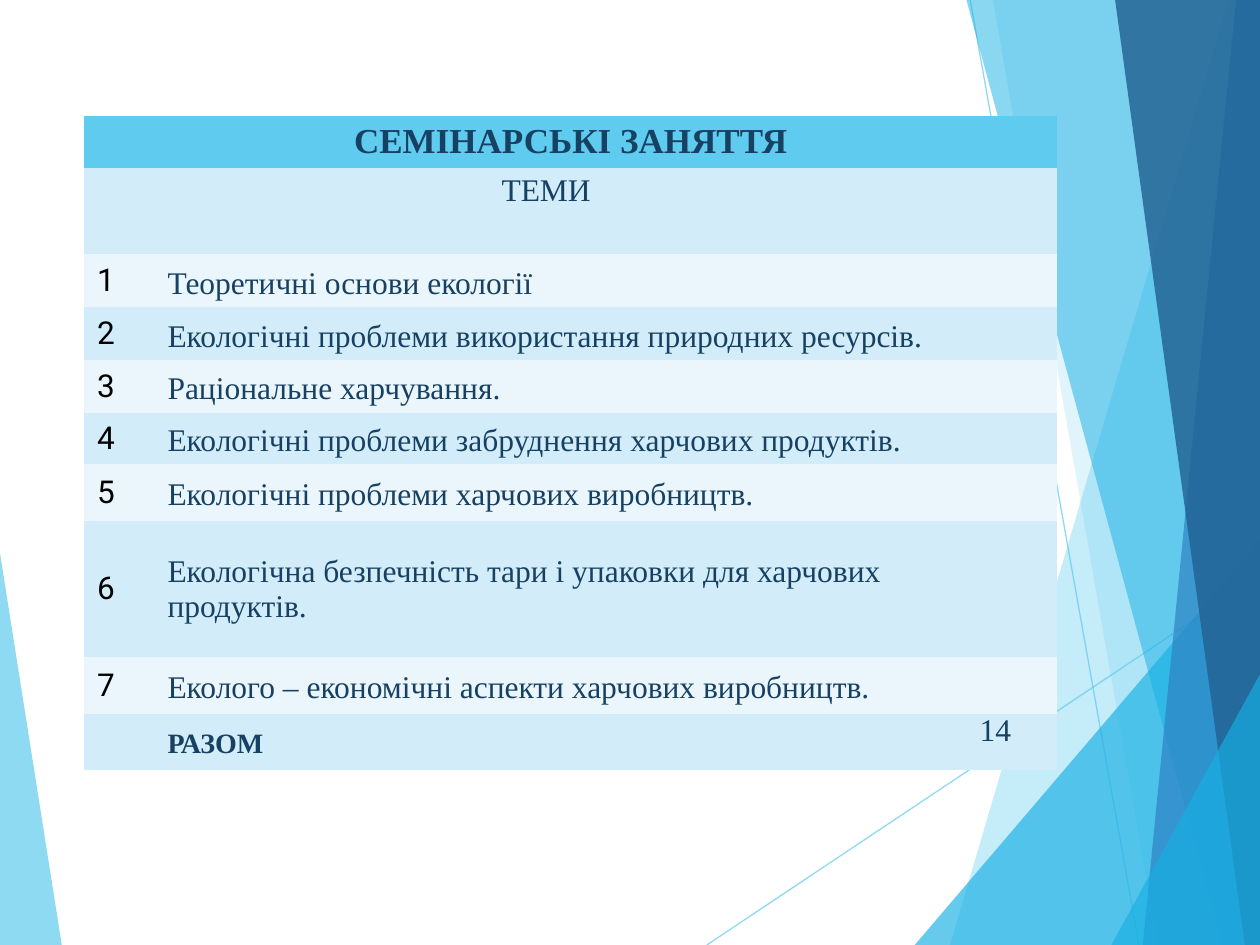
from lxml import etree
from pptx import Presentation
from pptx.dml.color import RGBColor
from pptx.enum import shapes, text
from pptx.oxml.ns import qn
from pptx.util import Inches, Pt

SKY = RGBColor(0x5F, 0xCB, 0xEF)
CYAN = RGBColor(0x17, 0xB0, 0xE4)
BLUE = RGBColor(0x2E, 0x83, 0xC3)
NAVY = RGBColor(0x22, 0x62, 0x92)
INK = RGBColor(0x17, 0x41, 0x62)
BLACK = RGBColor(0, 0, 0)
BAND_DARK = RGBColor(0xD2, 0xEC, 0xF9)
BAND_LIGHT = RGBColor(0xEA, 0xF6, 0xFC)

SERIF, SANS = "Times New Roman", "Roboto"
NO_GRID = "{2D5ABB26-0587-4C30-8999-92F81FD0307C}"
W, H = 10, 7.5

# Corner points, colour and opacity (%) of each facet, back to front
LEFT_FACET = ([(0, 4.39), (0.49, H), (0, H)], SKY, 70)
RIGHT_FACETS = [
    ([(9.75, 0), (7.54, H), (W, H), (W, 0)], SKY, 36),
    ([(7.88, 0), (9.19, H), (W, H), (W, 0)], SKY, 20),
    ([(7.26, H), (W, 4.29), (W, H)], CYAN, 66),
    ([(7.67, 0), (9.7, H), (W, H), (W, 0)], CYAN, 50),
    ([(9.81, 0), (9.07, H), (W, H), (W, 0)], BLUE, 70),
    ([(8.85, 0), (9.88, H), (W, H), (W, 0)], NAVY, 82),
    ([(8.82, H), (W, 5.35), (W, H)], CYAN, 66),
]
RAYS = [((5.61, H), (W, 4.57)), ((7.7, 0), (9.04, H))]

TOPICS = [
    "Теоретичні основи екології",
    "Екологічні проблеми використання природних ресурсів.",
    "Раціональне харчування.",
    "Екологічні проблеми забруднення харчових продуктів.",
    "Екологічні проблеми харчових виробництв.",
    "Екологічна безпечність тари і упаковки для харчових продуктів.",
    "Еколого – економічні аспекти харчових виробництв.",
]
COLUMNS = [0.59, 6.15, 0.98]
ROWS = [0.41, 0.69, 0.42, 0.42, 0.42, 0.4, 0.45, 1.08, 0.45, 0.45]
WRAPPED_TOPIC = 6


def set_opacity(properties, percent):
    """Add an alpha value to the first solid colour in the shape properties."""
    color = properties.find(".//" + qn("a:srgbClr"))
    etree.SubElement(color, qn("a:alpha")).set("val", str(percent * 1000))


class Deck:
    def __init__(self):
        self.presentation = Presentation()
        self.presentation.slide_width = Inches(W)
        self.presentation.slide_height = Inches(H)
        self.slide = self.presentation.slides.add_slide(
            self.presentation.slide_layouts[6])

    def facet(self, corners, color, opacity):
        points = [(Inches(x), Inches(y)) for x, y in corners]
        builder = self.slide.shapes.build_freeform(*points[0])
        builder.add_line_segments(points[1:], close=True)
        facet = builder.convert_to_shape()
        facet.shadow.inherit = False
        facet.fill.solid()
        facet.fill.fore_color.rgb = color
        facet.line.fill.background()
        set_opacity(facet._element.spPr, opacity)

    def ray(self, start, end):
        ray = self.slide.shapes.add_connector(
            shapes.MSO_CONNECTOR.STRAIGHT, *map(Inches, start + end))
        ray.line.color.rgb = SKY
        ray.line.width = Pt(0.75)
        properties = ray._element.spPr
        set_opacity(properties, 70)
        etree.SubElement(properties, qn("a:effectLst"))

    def table(self, left, top, columns, rows):
        table = self.slide.shapes.add_table(
            len(rows), len(columns), Inches(left), Inches(top),
            Inches(sum(columns)), Inches(sum(rows))).table
        table._tbl.tblPr.find(qn("a:tableStyleId")).text = NO_GRID
        for column, width in zip(table.columns, columns):
            column.width = Inches(width)
        for number, (row, height) in enumerate(zip(table.rows, rows)):
            row.height = Inches(height)
            for cell in row.cells:
                cell.fill.solid()
                cell.fill.fore_color.rgb = (
                    SKY if number == 0 else
                    BAND_DARK if number % 2 else BAND_LIGHT)
        return table

    def cell_text(self, cell, words, size=18, bold=False, font=SERIF,
                  color=INK, centered=False, middle=False, tight=False,
                  spaced=False):
        """Fill a cell; tight drops its top and bottom margins."""
        if middle:
            cell.vertical_anchor = text.MSO_ANCHOR.MIDDLE
        if tight:
            cell.margin_left = cell.margin_right = Inches(0.07)
            cell.margin_top = cell.margin_bottom = 0
        cell.text = words
        paragraph = cell.text_frame.paragraphs[0]
        if centered:
            paragraph.alignment = text.PP_ALIGN.CENTER
        if spaced:
            paragraph.line_spacing = 1.15
            paragraph.space_after = Pt(10)
        paragraph.font.name = font
        paragraph.font.size = Pt(size)
        paragraph.font.bold = bold
        paragraph.font.color.rgb = color


def main():
    deck = Deck()
    deck.facet(*LEFT_FACET)
    for start, end in RAYS:
        deck.ray(start, end)
    for facet in RIGHT_FACETS:
        deck.facet(*facet)

    seminars = deck.table(0.67, 0.92, COLUMNS, ROWS)
    seminars.cell(0, 0).merge(seminars.cell(0, 2))
    deck.cell_text(seminars.cell(0, 0), "СЕМІНАРСЬКІ ЗАНЯТТЯ", size=20,
                   bold=True, centered=True)
    deck.cell_text(seminars.cell(1, 1), "ТЕМИ", centered=True)
    for number, topic in enumerate(TOPICS, start=1):
        row = number + 1
        deck.cell_text(seminars.cell(row, 0), str(number), font=SANS,
                       color=BLACK, middle=True)
        deck.cell_text(seminars.cell(row, 1), topic, middle=True, tight=True,
                       spaced=number != WRAPPED_TOPIC)
    total_row = len(ROWS) - 1
    deck.cell_text(seminars.cell(total_row, 1), "РАЗОМ", size=16, bold=True,
                   middle=True, tight=True, spaced=True)
    deck.cell_text(seminars.cell(total_row, 2), "14", centered=True,
                   tight=True)

    deck.presentation.save("out.pptx")


if __name__ == "__main__":
    main()
